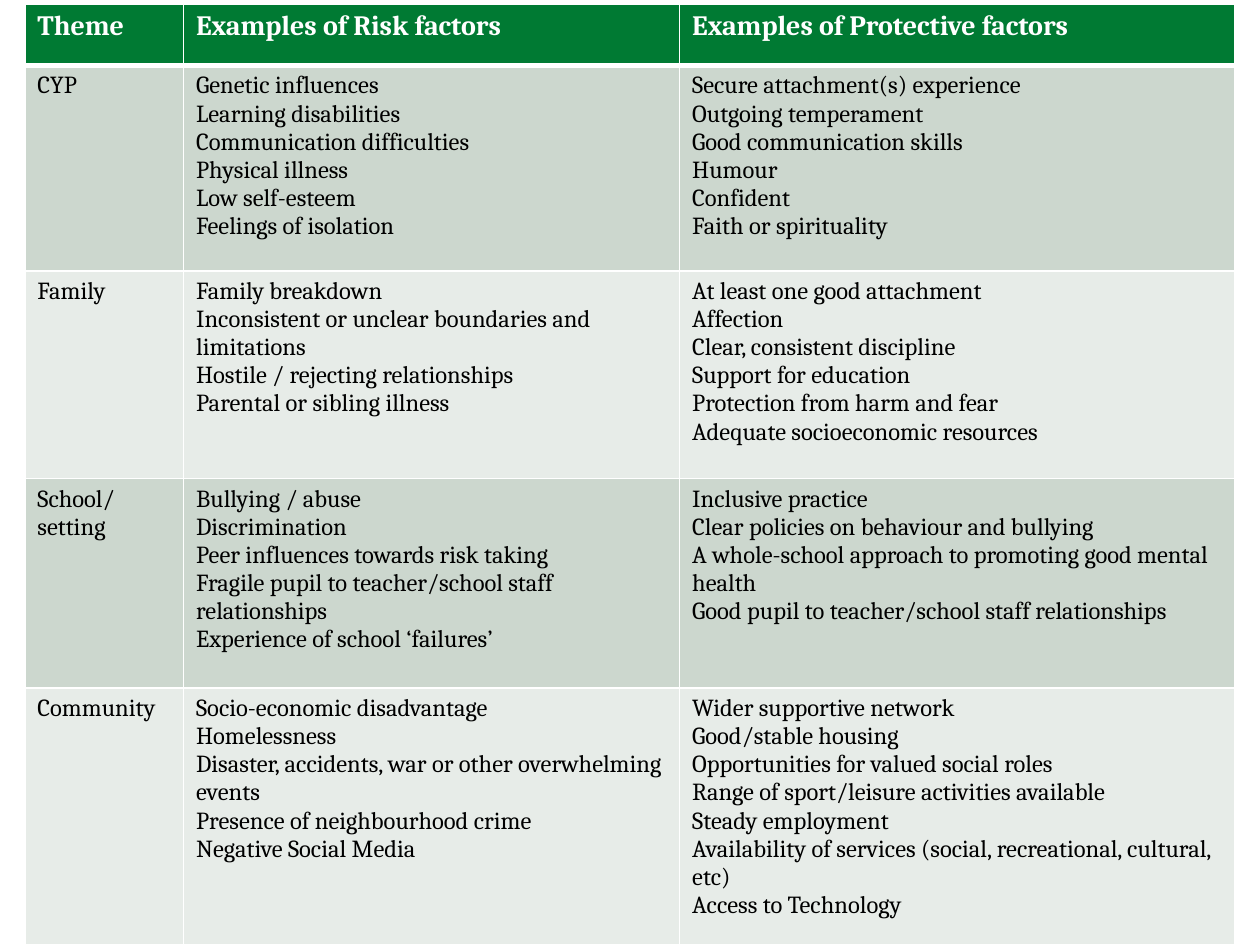
from lxml.etree import SubElement
from pptx import Presentation
from pptx.dml.color import RGBColor
from pptx.oxml.ns import qn
from pptx.util import Cm, Pt

WHITE = RGBColor(0xFF, 0xFF, 0xFF)
BLACK = RGBColor(0x00, 0x00, 0x00)
GREEN = RGBColor(0x00, 0x7A, 0x33)
BANDS = [RGBColor(0xCC, 0xD7, 0xCE), RGBColor(0xE7, 0xEC, 0xE8)]

COLUMN_WIDTHS = [3.2, 10, 11.2]
ROW_HEIGHTS = [1.24, 4.14, 4.19, 4.22, 5.18]

HEADINGS = ["Theme", "Examples of Risk factors", "Examples of Protective factors"]
THEMES = [
    ("CYP",
     ["Genetic influences", "Learning disabilities", "Communication difficulties",
      "Physical illness", "Low self-esteem", "Feelings of isolation"],
     ["Secure attachment(s) experience", "Outgoing temperament",
      "Good communication skills", "Humour", "Confident", "Faith or spirituality"]),
    ("Family",
     ["Family breakdown", "Inconsistent or unclear boundaries and limitations",
      "Hostile / rejecting relationships", "Parental or sibling illness"],
     ["At least one good attachment", "Affection", "Clear, consistent discipline",
      "Support for education", "Protection from harm and fear",
      "Adequate socioeconomic resources"]),
    ("School/ setting",
     ["Bullying / abuse", "Discrimination", "Peer influences towards risk taking",
      "Fragile pupil to teacher/school staff relationships",
      "Experience of school ‘failures’"],
     ["Inclusive practice", "Clear policies on behaviour and bullying",
      "A whole-school approach to promoting good mental health",
      "Good pupil to teacher/school staff relationships"]),
    ("Community",
     ["Socio-economic disadvantage", "Homelessness",
      "Disaster, accidents, war or other overwhelming events",
      "Presence of neighbourhood crime", "Negative Social Media"],
     ["Wider supportive network", "Good/stable housing",
      "Opportunities for valued social roles",
      "Range of sport/leisure activities available", "Steady employment",
      "Availability of services (social, recreational, cultural, etc)",
      "Access to Technology"]),
]


class SlideBuilder:
    def __init__(self, slide, font_name):
        self.slide = slide
        self.font_name = font_name

    def add_table(self, left, top, widths, heights):
        table = self.slide.shapes.add_table(
            len(heights), len(widths), Cm(left), Cm(top),
            Cm(sum(widths)), Cm(sum(heights))).table
        for column, width in zip(table.columns, widths):
            column.width = Cm(width)
        for row, height in zip(table.rows, heights):
            row.height = Cm(height)
        return table

    def set_borders(self, cell, bottom_width):
        """Draw white cell borders; must run before the cell is filled."""
        properties = cell._tc.get_or_add_tcPr()
        for side in "LRTB":
            width = bottom_width if side == "B" else 1
            line = SubElement(properties, qn(f"a:ln{side}"), w=str(Pt(width)))
            fill = SubElement(line, qn("a:solidFill"))
            SubElement(fill, qn("a:srgbClr"), val=str(WHITE))

    def fill_cell(self, cell, lines, fill, color, size, bold=False, bottom_width=1):
        self.set_borders(cell, bottom_width)
        cell.fill.solid()
        cell.fill.fore_color.rgb = fill
        cell.text = "\n".join(lines)
        for paragraph in cell.text_frame.paragraphs:
            font = paragraph.font
            font.name = self.font_name
            font.size = Pt(size)
            font.bold = bold
            font.color.rgb = color


def main():
    presentation = Presentation()
    presentation.slide_width = Cm(25.4)
    presentation.slide_height = Cm(19.05)
    slide = presentation.slides.add_slide(presentation.slide_layouts[6])
    builder = SlideBuilder(slide, "Cambria")

    table = builder.add_table(0.5, 0.08, COLUMN_WIDTHS, ROW_HEIGHTS)
    for column, heading in enumerate(HEADINGS):
        builder.fill_cell(table.cell(0, column), [heading], GREEN, WHITE, 16,
                          bold=True, bottom_width=3)
    for row, (theme, risks, protections) in enumerate(THEMES, start=1):
        band = BANDS[(row - 1) % 2]
        for column, lines in enumerate([[theme], risks, protections]):
            # The first body row shares the thick line under the header.
            cell = table.cell(row, column)
            builder.fill_cell(cell, lines, band, BLACK, 14)
            if row == 1:
                cell._tc.tcPr.find(qn("a:lnT")).set("w", str(Pt(3)))

    presentation.save("out.pptx")


if __name__ == "__main__":
    main()
